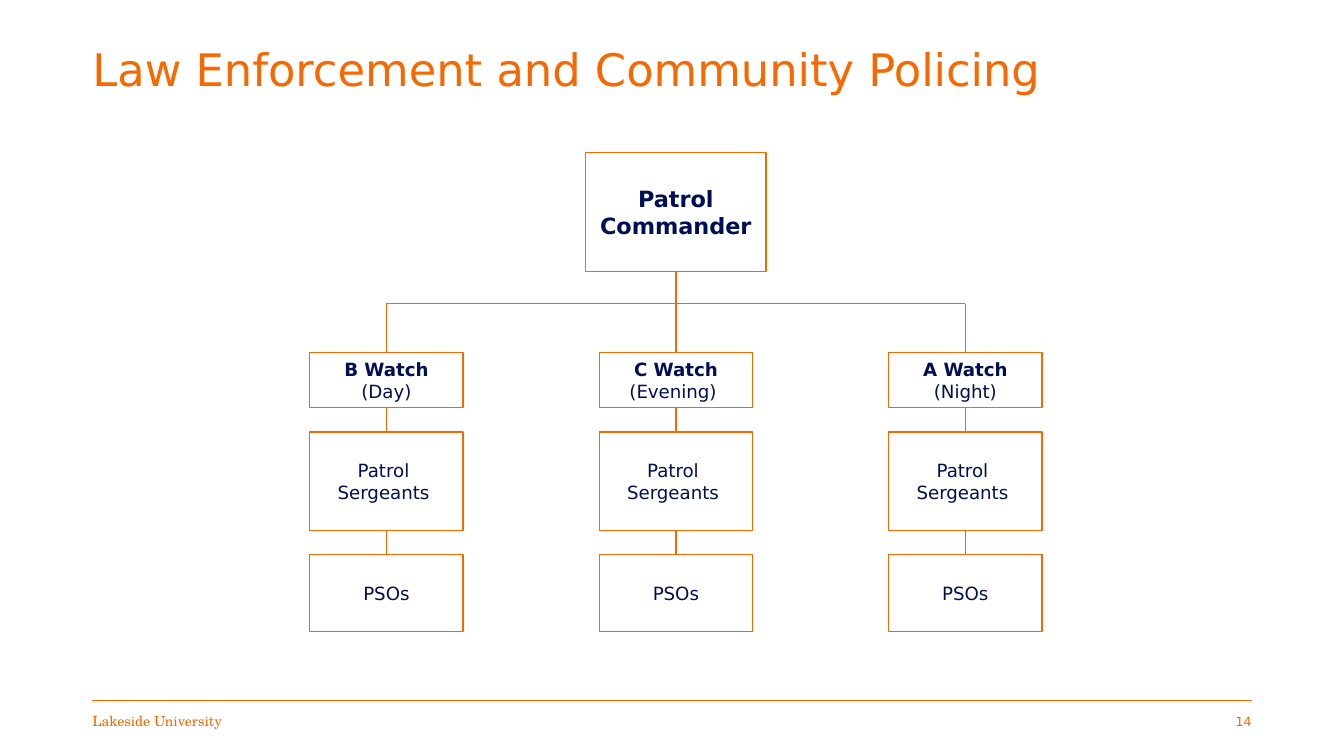
import pptx
import pptx.util
import pptx.dml.color
import pptx.enum.shapes
import pptx.enum.text
import pptx.oxml

Pt = pptx.util.Pt
ALIGN = pptx.enum.text.PP_ALIGN
ORANGE, NAVY = "F76900", "000E54"
SANS, SERIF = "DejaVu Sans", "TeX Gyre Schola"
TOP, BOTTOM = 0, 2

MARGIN, CONTENT_W = 66, 828
FOOTER_Y = 500.5
COLUMN_X, COLUMN_STEP, COLUMN_W = 276, 206.75, 109.5
BUS_Y = 217
WATCHES = [("B Watch", "(Day)"), ("C Watch", "(Evening) "), ("A Watch", "(Night)")]


def color(hex_value):
    return pptx.dml.color.RGBColor.from_string(hex_value)


def set_attrs(obj, values):
    for name, value in values.items():
        setattr(obj, name, value)


def write(tf, lines, align, font_color, font, spacing=1.0):
    """Fill a text frame; each line is (text, size, bold)."""
    set_attrs(tf, {"word_wrap": True,
                   "vertical_anchor": pptx.enum.text.MSO_ANCHOR.MIDDLE})
    for i, (text, size, bold) in enumerate(lines):
        p = tf.add_paragraph() if i else tf.paragraphs[0]
        set_attrs(p, {"alignment": align, "line_spacing": spacing})
        r = p.add_run()
        r.text = text
        set_attrs(r.font, {"name": font, "size": Pt(size), "bold": bold})
        r.font.color.rgb = color(font_color)


def add_text(s, x, y, w, h, text, size, align=ALIGN.LEFT, font=SANS, spacing=1.0):
    sp = s.shapes.add_textbox(Pt(x), Pt(y), Pt(w), Pt(h))
    set_attrs(sp.text_frame, {"margin_left": 0, "margin_right": 0})
    write(sp.text_frame, [(text, size, False)], align, ORANGE, font, spacing)


def add_box(s, center_x, y, w, h, lines):
    sp = s.shapes.add_shape(pptx.enum.shapes.MSO_SHAPE.RECTANGLE,
                            Pt(center_x - w / 2), Pt(y), Pt(w), Pt(h))
    sp.shadow.inherit = False
    sp.fill.background()
    sp.line.color.rgb = color(ORANGE)
    sp.line.width = Pt(1)
    write(sp.text_frame, lines, ALIGN.CENTER, NAVY, SANS)
    return sp


def add_line(s, x1=0, y1=0, x2=0, y2=0, above=None, below=None, width=1):
    """Draw a line; an end is joined to the box above or below if given."""
    line = s.shapes.add_connector(pptx.enum.shapes.MSO_CONNECTOR.STRAIGHT,
                                  Pt(x1), Pt(y1), Pt(x2), Pt(y2))
    line.line.color.rgb = color(ORANGE)
    line.line.width = Pt(width)
    line._element.spPr.append(pptx.oxml.parse_xml(
        '<a:effectLst xmlns:a="http://schemas.openxmlformats.org/drawingml/2006/main"/>'))
    if above is not None:
        line.begin_connect(above, BOTTOM)
    if below is not None:
        line.end_connect(below, TOP)


def add_watch_column(s, x, name, shift):
    """Stack watch, sergeants and PSOs; return the watch box."""
    watch = add_box(s, x, 252, COLUMN_W, 39, [(name, 13, True), (shift, 13, False)])
    sergeants = add_box(s, x, 308.5, COLUMN_W, 70.5,
                        [("Patrol ", 13, False), ("Sergeants ", 13, False)])
    psos = add_box(s, x, 396, COLUMN_W, 55, [("PSOs", 13, False)])
    add_line(s, above=watch, below=sergeants)
    add_line(s, above=sergeants, below=psos)
    return watch


def add_footer(s):
    right = MARGIN + CONTENT_W
    add_line(s, MARGIN, FOOTER_Y, right, FOOTER_Y, width=0.5)
    add_text(s, MARGIN, FOOTER_Y, 151, 29, "Lakeside University", 10, font=SERIF)
    add_text(s, right - 151, FOOTER_Y, 151, 29, "14", 9, ALIGN.RIGHT)


def add_org_chart(s):
    xs = [COLUMN_X + i * COLUMN_STEP for i in range(len(WATCHES))]
    commander = add_box(s, xs[1], 109, 129, 85, [("Patrol Commander", 16, True)])
    add_line(s, xs[0], BUS_Y, xs[-1], BUS_Y)
    for x, (name, shift) in zip(xs, WATCHES):
        watch = add_watch_column(s, x, name, shift)
        if x == xs[1]:
            add_line(s, above=commander, below=watch)
        else:
            add_line(s, x, BUS_Y, x, BUS_Y, below=watch)


def main():
    prs = pptx.Presentation()
    set_attrs(prs, {"slide_width": Pt(960), "slide_height": Pt(540)})
    s = prs.slides.add_slide(prs.slide_layouts[6])
    add_footer(s)
    add_text(s, MARGIN, -0.5, CONTENT_W, 104,
             "Law Enforcement and Community Policing", 32, spacing=0.9)
    add_org_chart(s)
    prs.save("out.pptx")


if __name__ == "__main__":
    main()
